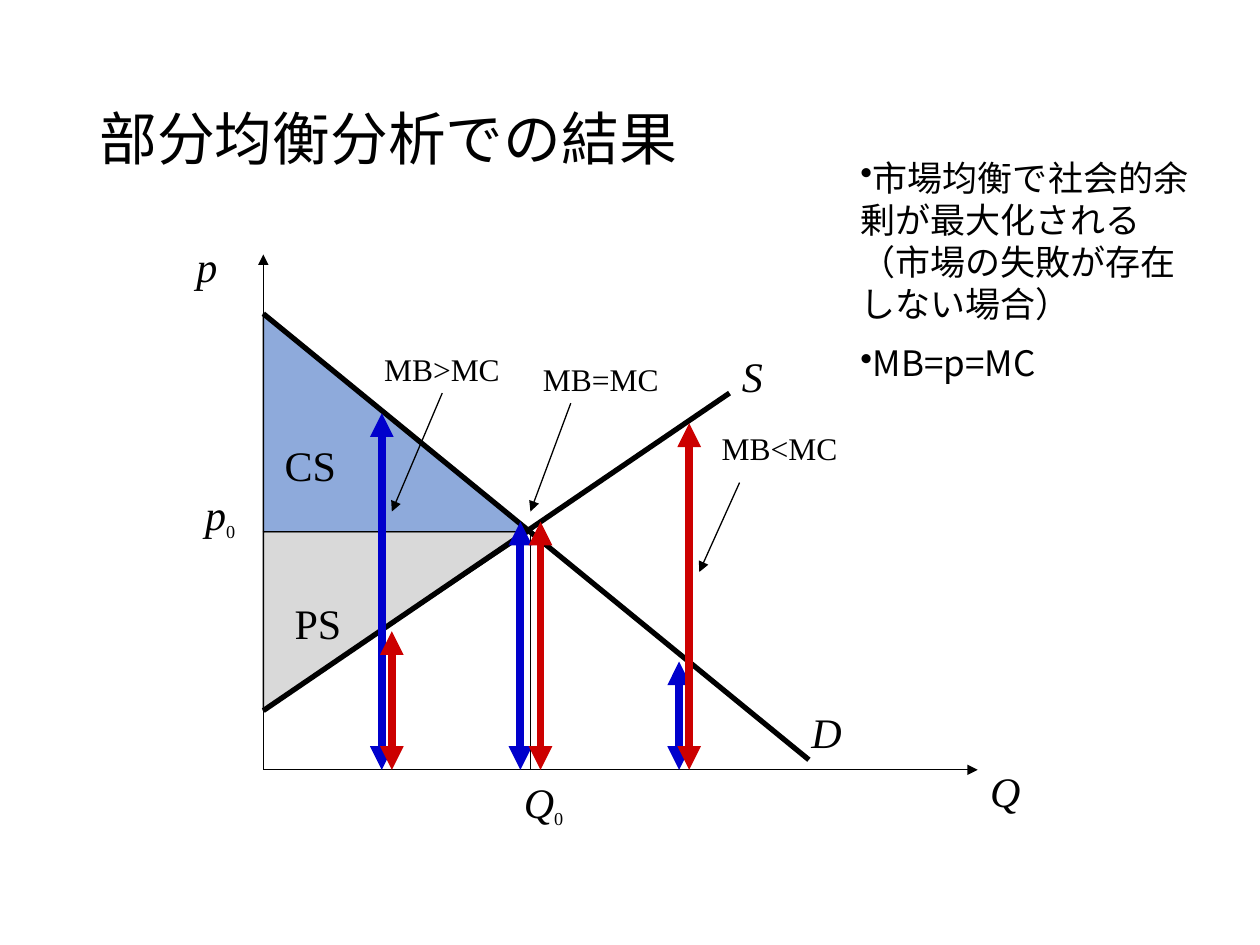
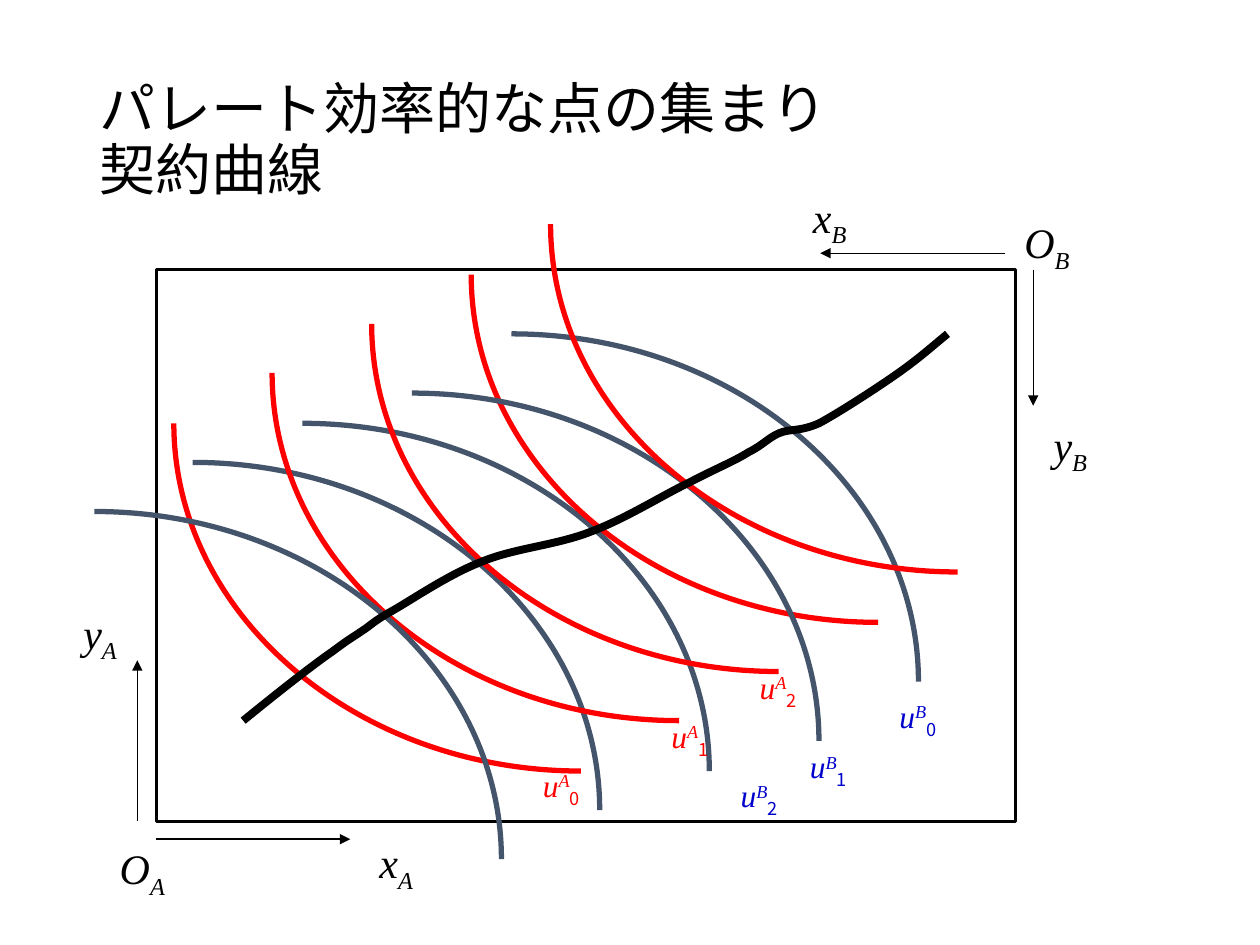
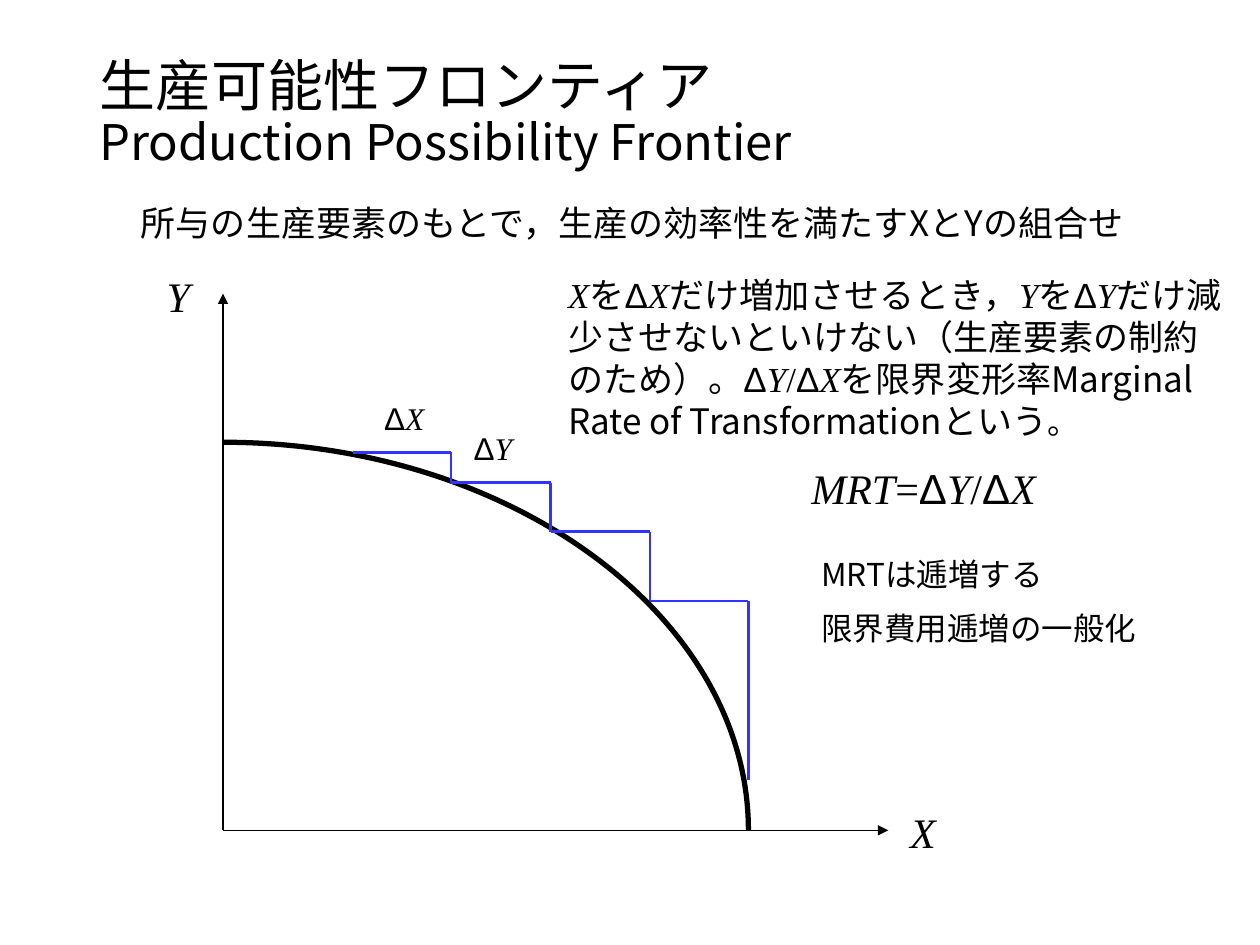
from lxml.etree import SubElement
from pptx import Presentation
from pptx.dml.color import RGBColor
from pptx.enum.shapes import MSO_CONNECTOR, MSO_SHAPE
from pptx.enum.text import MSO_ANCHOR, PP_ALIGN
from pptx.oxml.ns import qn
from pptx.util import Pt

PX = 9144
INK = {"black": "000000", "blue": "0000CC", "red": "CC0000", "sky": "4472C4",
       "grey": "C0C0C0", "slate": "44546A", "bright": "FF0000", "step": "3333FF"}
SANS, SERIF = "Noto Sans CJK JP", "Times New Roman"
FACE = {"sans": (SANS, False), "roman": (SERIF, False),
        "math": (SERIF, True), "greek": ("Arial", False)}
DELTA = ("Δ", "greek")
BREAK = ("\n", "sans")


class Deck:
    """Hold the style and the current slide, and draw each kind of element."""

    def __init__(self):
        self.file = Presentation()
        self.file.slide_width, self.file.slide_height = 1000 * PX, 750 * PX

    def page(self):
        self.shapes = self.file.slides.add_slide(self.file.slide_layouts[6]).shapes

    def hue(self, tone):
        return RGBColor.from_string(INK[tone])

    def pen(self, shape, tone, width):
        shape.line.color.rgb = self.hue(tone)
        shape.line.width = Pt(width)

    def run(self, para, size, tone, text, kind="math", base=0, own=None):
        if text == "\n":
            para.add_line_break()
            return
        run = para.add_run()
        run.text = text
        font = run.font
        font.name, font.italic = FACE[kind]
        font.size = Pt(own or size)
        font.color.rgb = self.hue(tone)
        props = run._r.get_or_add_rPr()
        SubElement(props, qn("a:ea"), typeface=SANS)
        if base:
            props.set("baseline", str(base * 1000))

    def text(self, box, *paras, size=24, tone="black", mid=False, dot=False, head=False):
        frame = self.shapes.add_textbox(*(n * PX for n in box)).text_frame
        frame.word_wrap = True
        if head:
            frame.vertical_anchor = MSO_ANCHOR.MIDDLE
        for i, runs in enumerate(paras):
            para = frame.add_paragraph() if i else frame.paragraphs[0]
            para.alignment = PP_ALIGN.CENTER if mid else PP_ALIGN.LEFT
            props = para._p.get_or_add_pPr()
            if head:
                para.line_spacing = 0.9
            else:
                gap = SubElement(props, qn("a:spcBef"))
                SubElement(gap, qn("a:spcPct"), val="50000")
            if dot:
                SubElement(props, qn("a:buChar"), char="•")
            for run in runs:
                self.run(para, size, tone, *run)

    def title(self, box, *runs, size=32):
        self.text(box, runs, size=size, head=True)

    def line(self, start, end, tone="black", width=0.75, tips=""):
        ends = [n * PX for n in (*start, *end)]
        line = self.shapes.add_connector(MSO_CONNECTOR.STRAIGHT, *ends)
        self.pen(line, tone, width)
        props = line.element.spPr
        for tip in tips.split():
            SubElement(props.find(qn("a:ln")), qn(f"a:{tip}End"), type="triangle")
        SubElement(props, qn("a:effectLst"))

    def arrow(self, start, end):
        self.line(start, end, tips="tail")

    def shape(self, kind, box, tone=None, width=0.75, flip=False):
        shape = self.shapes.add_shape(kind, *(n * PX for n in box))
        shape.shadow.inherit = False
        self.pen(shape, "black", width)
        if tone:
            shape.fill.solid()
            shape.fill.fore_color.rgb = self.hue(tone)
            color = shape.element.spPr.find(".//" + qn("a:srgbClr"))
            SubElement(color, qn("a:alpha"), val="60000")
        else:
            shape.fill.background()
        if flip:
            shape.element.spPr.find(qn("a:xfrm")).set("flipV", "1")

    def curve(self, points, tone="black", width=3):
        pen = self.shapes.build_freeform(*points[0], scale=PX)
        pen.add_line_segments(points[1:], close=False)
        shape = pen.convert_to_shape()
        shape.shadow.inherit = False
        shape.fill.background()
        self.pen(shape, tone, width)
        track = shape.element.spPr.find(".//" + qn("a:path"))
        legs = track.findall(qn("a:lnTo"))
        for i in range(0, len(legs), 3):
            bend = SubElement(track, qn("a:cubicBezTo"))
            for leg in legs[i:i + 3]:
                bend.append(leg[0])
                track.remove(leg)

    def arc(self, x, y, w, h, tone="black"):
        self.curve([(x, y), (round(x + 0.55 * w), y),
                    (x + w, round(y + 0.45 * h)), (x + w, y + h)], tone)


def market(deck):
    deck.page()
    deck.title((69, 40, 862, 145), ("部分均衡分析での結果", "sans"), size=33)
    deck.arrow((209, 611), (776, 611))
    deck.arrow((209, 611), (209, 202))
    deck.shape(MSO_SHAPE.RIGHT_TRIANGLE, (209, 249, 212, 173), "sky")
    deck.line((421, 422), (421, 611))
    deck.shape(MSO_SHAPE.RIGHT_TRIANGLE, (209, 422, 212, 142), "grey", flip=True)
    deck.line((209, 249), (642, 603), width=3)
    deck.line((209, 564), (579, 312), width=3)
    zero = ("0", "roman", -25, 18)
    for x, y, w, *runs in (
            (146, 186, 47, ("p",)), (776, 603, 63, ("Q",)),
            (153, 383, 47, ("p",), zero), (406, 611, 63, ("Q",), zero),
            (634, 556, 39, ("D",)), (579, 273, 39, ("S",)),
            (216, 344, 79, ("CS", "roman")), (224, 469, 71, ("PS", "roman"))):
        deck.text((x, y, w, 50), runs)
    for x, top, tone in ((303, 328, "blue"), (311, 501, "red"), (413, 414, "blue"),
                         (539, 525, "blue"), (429, 414, "red"), (547, 336, "red")):
        deck.line((x, 611), (x, top), tone, 4.5, "head tail")
    for word, x, y, w, start, end in (
            ("MB>MC", 295, 273, 126, (351, 312), (311, 406)),
            ("MB=MC", 421, 281, 118, (453, 320), (421, 406)),
            ("MB<MC", 563, 336, 126, (587, 383), (555, 454))):
        deck.arrow(start, end)
        deck.text((x, y, w, 40), [(word, "roman")], size=18)
    deck.text((673, 119, 297, 195),
              [("市場均衡で社会的余剰が最大化される（市場の失敗が存在しない場合）", "sans")],
              [("MB=p=MC", "sans")], size=20, dot=True)


def pareto(deck):
    deck.page()
    deck.shape(MSO_SHAPE.RECTANGLE, (124, 214, 682, 438), width=1.5)
    for start, end in (((124, 666), (278, 666)), ((798, 201), (651, 201)),
                       ((820, 214), (820, 322)), ((109, 652), (109, 524))):
        deck.arrow(start, end)
    for name, who, x, y, w in (
            ("O", "A", 80, 664, 66), ("O", "B", 798, 167, 66),
            ("x", "A", 278, 659, 73), ("y", "A", 43, 477, 73),
            ("x", "B", 622, 147, 73), ("y", "B", 813, 328, 73)):
        deck.text((x, y, w, 50), [(name,), (who, "math", -25)], mid=True)
    deck.title((69, 40, 682, 145), ("パレート効率的な点の集まり", "sans"),
               BREAK, ("契約曲線", "sans"))
    w, h = 323, 276
    for tone, x, y in (
            ("slate", 240, 336), ("slate", 153, 367), ("bright", 216, 296),
            ("bright", 295, 257), ("bright", 374, 218), ("slate", 406, 265),
            ("slate", 327, 312), ("bright", 138, 336), ("bright", 437, 178),
            ("slate", 75, 406)):
        if tone == "slate":
            deck.arc(x, y, w, h, tone)
        else:
            deck.arc(x + w, y + h, -w, -h, tone)
    for who, tone, spots in (
            ("A", "bright", ((406, 603), (508, 564), (578, 525))),
            ("B", "blue", ((689, 548), (618, 588), (563, 611)))):
        for i, (x, y) in enumerate(spots):
            deck.text((x, y, 79, 40),
                      [("u",), (who, "math", 30), (str(i), "sans", -25)],
                      size=18, tone=tone, mid=True)
    deck.curve([(193, 572), (220, 550), (248, 528), (264, 517),
                (280, 505), (280, 506), (287, 501), (295, 496), (295, 494), (311, 485),
                (327, 476), (356, 456), (382, 446), (408, 435), (441, 433), (469, 422),
                (496, 412), (526, 393), (547, 383), (568, 372), (583, 366), (594, 359),
                (606, 353), (609, 348), (618, 344), (627, 340), (634, 343), (650, 336),
                (665, 328), (696, 308), (713, 296), (730, 284), (741, 274), (752, 265)],
               width=4.5)


def frontier(deck):
    deck.page()
    deck.title((69, 40, 864, 102), ("生産可能性フロンティア", "sans"), BREAK,
               ("Production Possibility Frontier", "sans", 0, 28))
    deck.arrow((177, 659), (705, 659))
    deck.arrow((177, 659), (177, 233))
    deck.arc(177, 351, 417, 308)
    deck.text((705, 635, 55, 50), [("X",)], mid=True)
    deck.text((114, 210, 55, 50), [("Y",)], mid=True)
    deck.text((102, 155, 827, 44),
              [("所与の生産要素のもとで，生産の効率性を満たすXとYの組合せ", "sans")], size=20)
    steps = [(280, 359), (358, 359), (358, 383), (437, 383), (437, 422),
             (516, 422), (516, 477), (594, 477), (594, 619)]
    for start, end in zip(steps, steps[1:]):
        deck.line(start, end, "step", 1.5)
    ratio = [DELTA, ("Y",), ("/", "roman"), DELTA, ("X",)]
    deck.text((591, 362, 284, 50), [("MRT",), ("=", "roman"), *ratio], mid=True)
    deck.text((441, 212, 539, 145),
              [("X",), ("を", "sans"), DELTA, ("X",), ("だけ増加させるとき，", "sans"),
               ("Y",), ("を", "sans"), DELTA, ("Y",),
               ("だけ減少させないといけない（生産要素の制約のため）。", "sans"), *ratio,
               ("を限界変形率Marginal Rate of Transformationという", "sans"),
               ("。", "sans", 0, 18)], size=20)
    deck.text((642, 436, 339, 86), [("MRTは逓増する", "sans")],
              [("限界費用逓増の一般化", "sans")], size=18)
    for name, x, y in (("X", 295, 312), ("Y", 366, 336)):
        deck.text((x, y, 55, 40), [DELTA, (name,)], size=18)


def main():
    deck = Deck()
    for draw in (market, pareto, frontier):
        draw(deck)
    deck.file.save("out.pptx")


if __name__ == "__main__":
    main()
